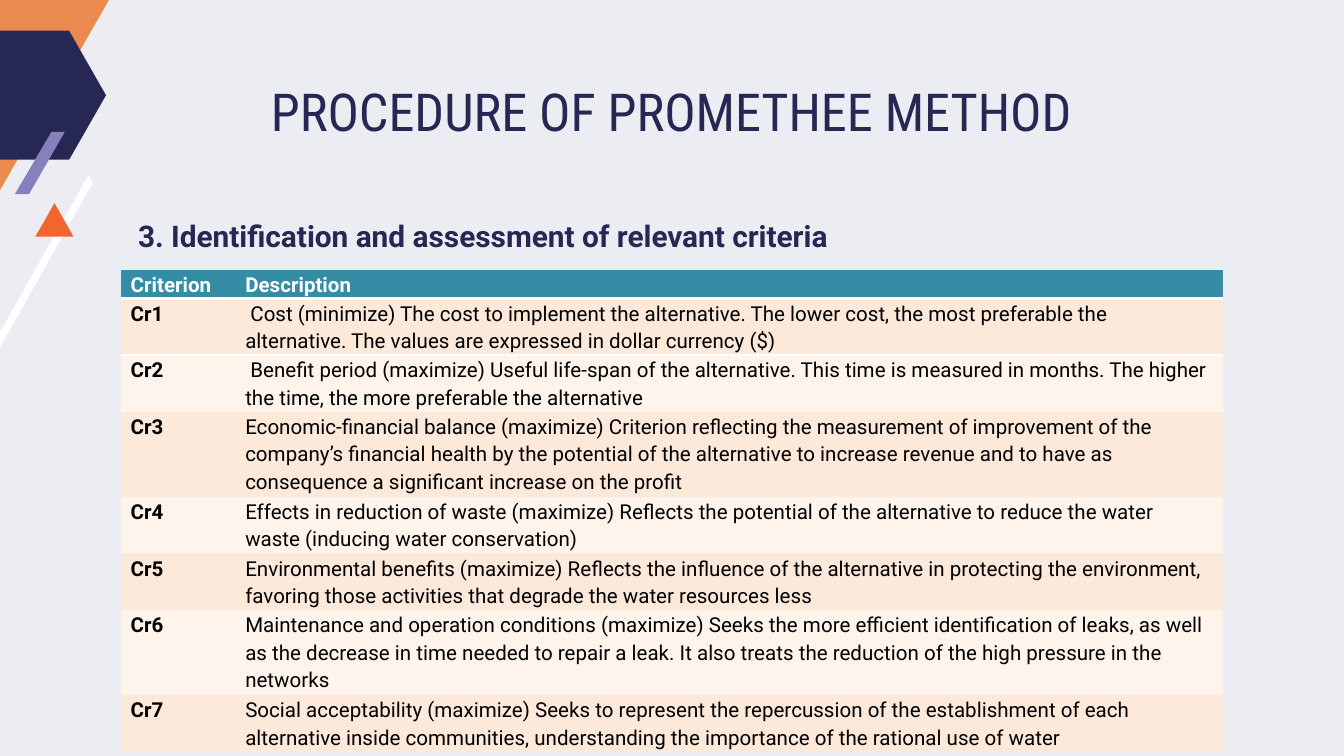
from pptx import Presentation
from pptx.dml.color import RGBColor
from pptx.enum import shapes, text
from pptx.oxml import parse_xml
from pptx.oxml.ns import nsdecls
from pptx.util import Pt

NAVY, WHITE, TEAL, BLACK = "272753", "FFFFFF", "348DA5", "000000"
BANDS = "FDE9D9", "FEF4EC"
PLAIN = "{2D5ABB26-0587-4C30-8999-92F81FD0307C}"

TITLE = "PROCEDURE OF PROMETHEE METHOD"
HEAD = "3. Identification and assessment of relevant criteria"
# label, description, number of text lines
ROWS = [
    ("Criterion", "Description", 1),
    ("Cr1", " Cost (minimize) The cost to implement the alternative. The lower cost, "
     "the most preferable the alternative. The values are expressed in dollar currency ($)", 2),
    ("Cr2", " Benefit period (maximize) Useful life-span of the alternative. This time is "
     "measured in months. The higher the time, the more preferable the alternative", 2),
    ("Cr3", "Economic-financial balance (maximize) Criterion reflecting the measurement of "
     "improvement of the company’s financial health by the potential of the alternative to "
     "increase revenue and to have as consequence a significant increase on the profit", 3),
    ("Cr4", "Effects in reduction of waste (maximize) Reflects the potential of the "
     "alternative to reduce the water waste (inducing water conservation)", 2),
    ("Cr5", "Environmental benefits (maximize) Reflects the influence of the alternative in "
     "protecting the environment, favoring those activities that degrade the water "
     "resources less", 2),
    ("Cr6", "Maintenance and operation conditions (maximize) Seeks the more efficient "
     "identification of leaks, as well as the decrease in time needed to repair a leak. It "
     "also treats the reduction of the high pressure in the networks", 3),
    ("Cr7", "Social acceptability (maximize) Seeks to represent the repercussion of the "
     "establishment of each alternative inside communities, understanding the importance of "
     "the rational use of water", 2),
]
COLS = 61.4, 529
LINE = 14.7

CORNER = "EA8A4F", [(0, 0), (58.4, 0), (0, 102)]
STRIPE = WHITE, [(-6.5, 189.4), (47.5, 93.6), (49.7, 97.9), (-4.3, 193.7)]
PEAK = "F1662D", [(18.9, 126.8), (39.4, 126.8), (29.2, 108.8)]
SLASH = "8680BC", [(27.6, 70.6), (8, 104), (15.6, 104), (34.8, 70.6)]


def color(code):
    return RGBColor.from_string(code)


def paint(shape, code):
    shape.fill.solid()
    shape.fill.fore_color.rgb = color(code)
    shape.line.fill.background()
    shape.shadow.inherit = False


def outline(slide, code, points):
    first, *rest = [(Pt(x), Pt(y)) for x, y in points]
    pen = slide.shapes.build_freeform(*first, scale=1.0)
    pen.add_line_segments(rest, close=True)
    paint(pen.convert_to_shape(), code)


def write(frame, words, code, space=1.15, align=None, **form):
    """Fill the first paragraph; form holds font values."""
    para = frame.paragraphs[0]
    para.line_spacing = space
    para.alignment = align
    run = para.add_run()
    run.text = words
    for key, value in form.items():
        setattr(run.font, key, value)
    run.font.color.rgb = color(code)


def add_box(slide, place, words, **form):
    box = slide.shapes.add_textbox(*map(Pt, place))
    frame = box.text_frame
    frame.word_wrap = True
    for side in ("left", "top", "right", "bottom"):
        setattr(frame, f"margin_{side}", Pt(7.2))
    frame.vertical_anchor = text.MSO_ANCHOR.TOP
    write(frame, words, NAVY, **form)
    return frame


def rule(cell, side):
    """Draw a white border on one side of a cell."""
    cell._tc.get_or_add_tcPr().insert(0, parse_xml(
        f'<a:ln{side} {nsdecls("a")} w="{Pt(1.5)}"><a:solidFill>'
        f'<a:srgbClr val="{WHITE}"/></a:solidFill></a:ln{side}>'))


def add_grid(slide):
    high = LINE * sum(row[2] for row in ROWS)
    frame = slide.shapes.add_table(len(ROWS), len(COLS), Pt(64.8), Pt(144.7),
                                   Pt(sum(COLS)), Pt(high))
    table = frame.table
    table.first_row = table.horz_banding = False
    table._tbl.tblPr[0].text = PLAIN
    for col, wide in zip(table.columns, COLS):
        col.width = Pt(wide)
    for i, (*words, lines) in enumerate(ROWS):
        table.rows[i].height = Pt(LINE * lines)
        for j, word in enumerate(words):
            cell = table.cell(i, j)
            cell.margin_left = cell.margin_right = Pt(5.2)
            cell.margin_top = cell.margin_bottom = 0
            cell.fill.solid()
            cell.fill.fore_color.rgb = color(BANDS[(i - 1) % 2] if i else TEAL)
            write(cell.text_frame, word, BLACK if i else WHITE, name="Roboto",
                  size=Pt(11), bold=i == 0 or j == 0)
            if i < 2:
                rule(cell, "BT"[i])


def main():
    deck = Presentation()
    deck.slide_width, deck.slide_height = Pt(720), Pt(405)
    slide = deck.slides.add_slide(deck.slide_layouts[6])
    back = slide.background.fill
    back.solid()
    back.fore_color.rgb = color("ECEDF3")

    for part in (CORNER, STRIPE, PEAK):
        outline(slide, *part)
    hexa = slide.shapes.add_shape(shapes.MSO_SHAPE.HEXAGON,
                                  Pt(-21), Pt(16.5), Pt(77.8), Pt(69.1))
    hexa.adjustments[0] = 0.286
    paint(hexa, NAVY)
    outline(slide, *SLASH)

    head = add_box(slide, (54.7, 106.6, 623.5, 28), HEAD,
                   name="Roboto", size=Pt(16), bold=True)
    head.paragraphs[0]._p.get_or_add_pPr().set("marL", str(Pt(12.2)))
    add_box(slide, (91.4, 35.3, 536.4, 45.4), TITLE, space=1.0,
            align=text.PP_ALIGN.CENTER, name="Roboto Condensed", size=Pt(28))
    add_grid(slide)
    deck.save("out.pptx")


if __name__ == "__main__":
    main()
